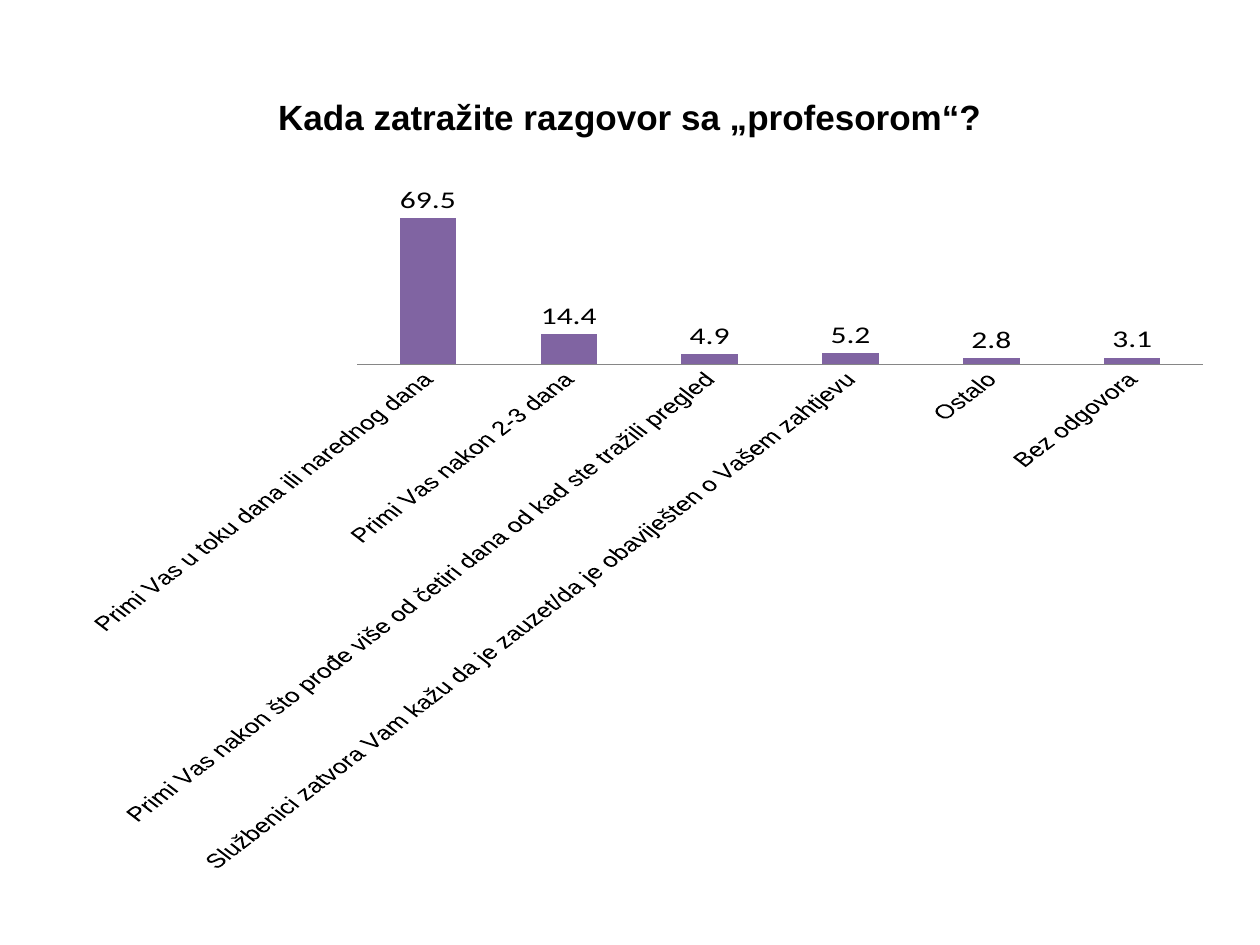
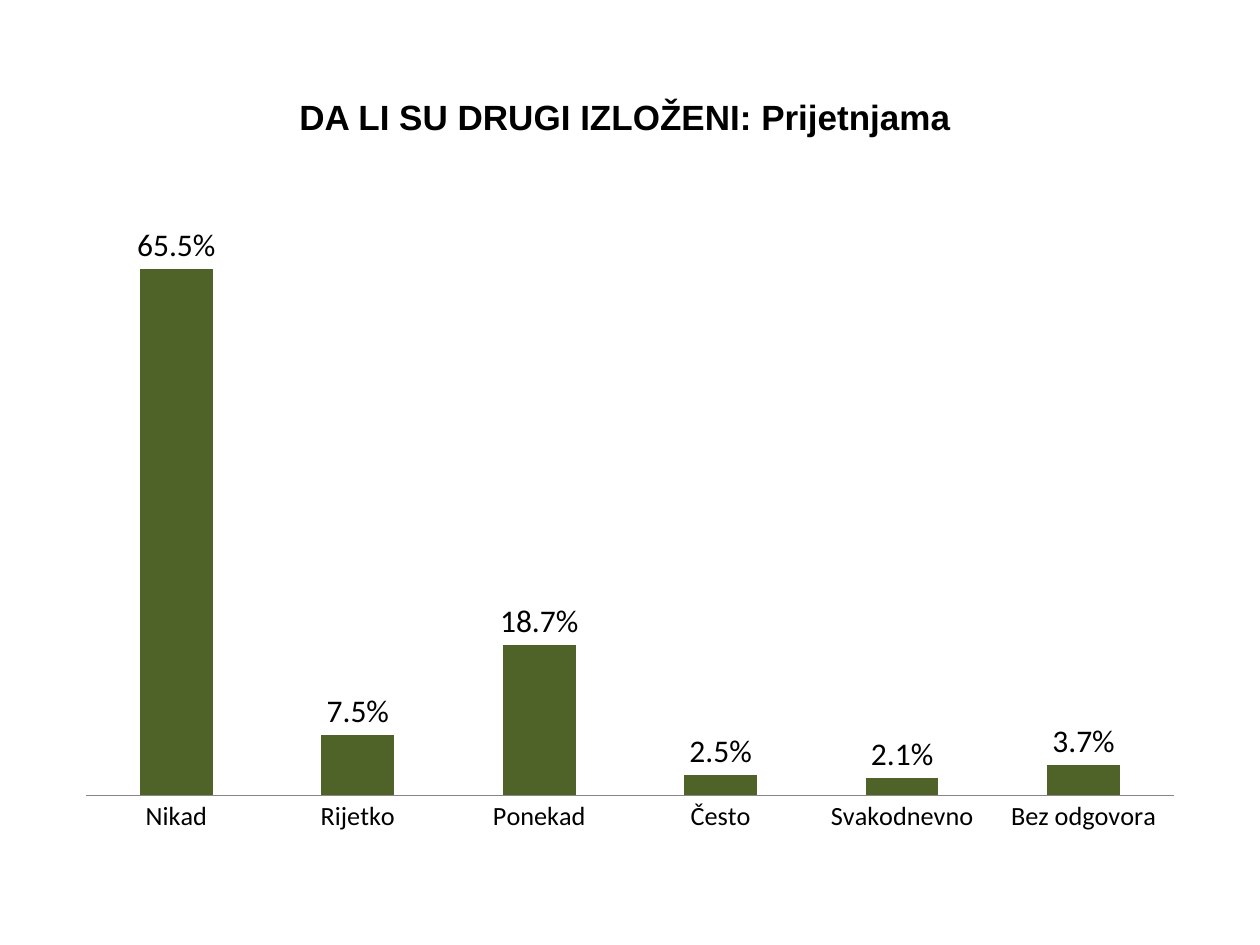
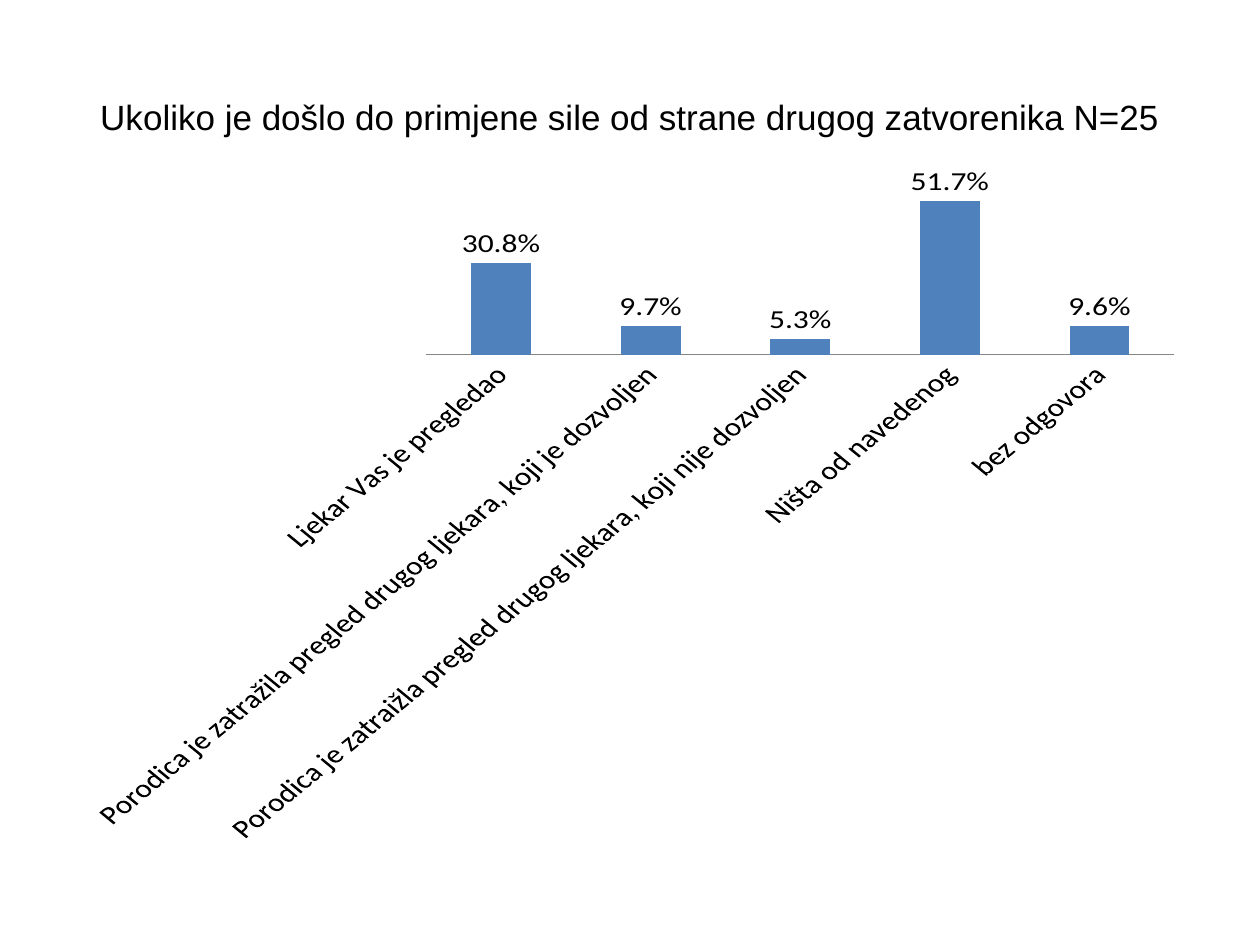
from pptx import Presentation
from pptx.chart.data import CategoryChartData as Data
from pptx.dml.color import RGBColor as Rgb
from pptx.enum.chart import XL_CHART_TYPE as Kind
from pptx.enum.chart import XL_LABEL_POSITION as Spot
from pptx.enum.chart import XL_TICK_MARK as Tick
from pptx.enum.text import MSO_ANCHOR as Anchor
from pptx.enum.text import PP_ALIGN as Align
from pptx.util import Pt

PX = 9144
COLORS = {
    "ink": "000000",
    "axis": "868686",
    "plum": "8064A2",
    "moss": "4F6228",
    "blue": "4F81BD",
}
HEAD = (50, 30, 900, 125)

PAGES = [
    dict(
        title="Kada zatražite razgovor sa „profesorom“?",
        bold=True,
        box=(51, 147, 922, 546),
        fill="plum",
        form="###0.0",
        face="Arial",
        tilt=True,
        rows=[
            ("Primi Vas u toku dana ili narednog dana", 69.5),
            ("Primi Vas nakon 2-3 dana", 14.4),
            ("Primi Vas nakon što prođe više od četiri dana od kad ste tražili pregled", 4.9),
            ("Službenici zatvora Vam kažu da je zauzet/da je obaviješten o Vašem zahtjevu", 5.2),
            ("Ostalo", 2.8),
            ("Bez odgovora", 3.1),
        ],
    ),
    dict(
        title="DA LI SU DRUGI IZLOŽENI: Prijetnjama ",
        bold=True,
        box=(50, 175, 900, 495),
        fill="moss",
        form="0.0%",
        rows=[
            ("Nikad", 0.655),
            ("Rijetko", 0.075),
            ("Ponekad", 0.187),
            ("Često", 0.025),
            ("Svakodnevno", 0.021),
            ("Bez odgovora", 0.037),
        ],
    ),
    dict(
        title="Ukoliko je došlo do primjene sile od strane drugog zatvorenika N=25",
        box=(50, 131, 900, 539),
        fill="blue",
        form="###0.0%",
        size=18,
        tilt=True,
        lap=-25,
        rows=[
            ("Ljekar Vas je pregledao", 0.308),
            ("Porodica je zatražila pregled drugog ljekara, koji je dozvoljen", 0.097),
            ("Porodica je zatraižla pregled drugog ljekara, koji nije dozvoljen", 0.053),
            ("Ništa od navedenog", 0.517),
            ("bez odgovora", 0.096),
        ],
    ),
]


def emu(box):
    return [n * PX for n in box]


def color(name):
    return Rgb.from_string(COLORS[name])


def style(font, size, face, bold=False):
    font.size = Pt(size)
    font.name = face
    font.bold = bold
    font.color.rgb = color("ink")


def write(slide, box, text, size=20, face="Arial", bold=False):
    frame = slide.shapes.add_textbox(*emu(box)).text_frame
    frame.word_wrap = True
    frame.vertical_anchor = Anchor.MIDDLE
    para = frame.paragraphs[0]
    para.alignment = Align.CENTER
    run = para.add_run()
    run.text = text
    style(run.font, size, face, bold)


def draw_bars(slide, box, rows, fill, form, face="Calibri", size=15, tilt=False, lap=0):
    data = Data(number_format=form)
    data.categories = [name for name, _ in rows]
    data.add_series("Series 1", [value for _, value in rows])
    chart = slide.shapes.add_chart(Kind.COLUMN_CLUSTERED, *emu(box), data).chart
    chart.has_title = False
    chart.has_legend = False
    style(chart.font, 18, "Calibri")

    plot = chart.plots[0]
    plot.gap_width = 150
    plot.overlap = lap
    plot.vary_by_categories = False
    bars = plot.series[0].format.fill
    bars.solid()
    bars.fore_color.rgb = color(fill)

    plot.has_data_labels = True
    labels = plot.data_labels
    labels.show_value = True
    labels.number_format = form
    labels.number_format_is_linked = False
    labels.position = Spot.OUTSIDE_END
    style(labels.font, 18, "Calibri")

    chart.value_axis.visible = False
    chart.value_axis.has_major_gridlines = False
    axis = chart.category_axis
    axis.major_tick_mark = Tick.NONE
    axis.minor_tick_mark = Tick.NONE
    axis.format.line.color.rgb = color("axis")
    axis.format.line.width = Pt(0.75)
    style(axis.tick_labels.font, size, face)
    if tilt:
        body = axis._element.txPr.bodyPr
        body.set("rot", "-2700000")
        body.set("vert", "horz")


def add_page(deck, title, bold=False, **bars):
    slide = deck.slides.add_slide(deck.slide_layouts[6])
    write(slide, HEAD, title, bold=bold)
    draw_bars(slide, **bars)


def main():
    deck = Presentation()
    deck.slide_width, deck.slide_height = emu((1000, 750))
    for page in PAGES:
        add_page(deck, **page)
    deck.save("out.pptx")


if __name__ == "__main__":
    main()
